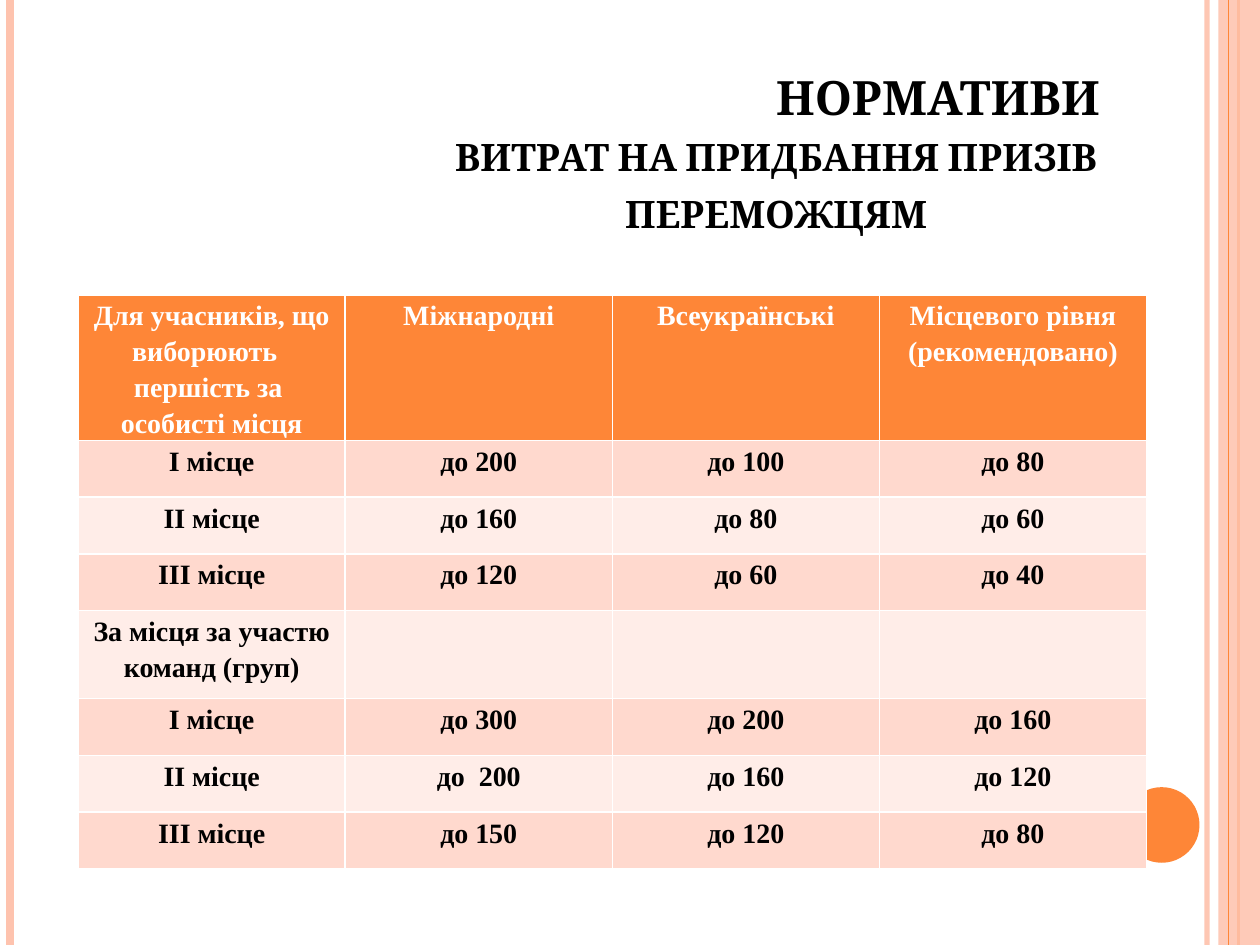
"""Build the slide with the spending norms for winners' prizes."""
from pptx import Presentation, util as u
from pptx.dml.color import RGBColor
from pptx.enum import shapes, text
from pptx.oxml.ns import qn
from lxml import etree

ORANGE, PEACH, BLACK, WHITE = "FE8637", "FEC3AE", "000000", "FFFFFF"
BANDS = "FFD9CE", "FFEDE8"
NORMS = [
    ["Для учасників, що виборюють  \nпершість за \nособисті місця", "Міжнародні",
     "Всеукраїнські", "Місцевого рівня (рекомендовано)"],
    ["I місце", "до 200", "до 100", "до 80"],
    ["II місце", "до 160", "до 80", "до 60"],
    ["III місце", "до 120", "до 60", "до 40"],
    ["За місця за участю команд (груп)", "", "", ""],
    ["I місце", "до 300", "до 200", "до 160"],
    ["II місце", "до  200", "до 160", "до 120"],
    ["III місце", "до 150", "до 120", "до 80"],
]
ROW_HEIGHTS = {0: 1.04, 4: 0.7}


def color(value):
    """Turn a hex string into a colour."""
    return RGBColor.from_string(value)


def paint(fill, value, opacity=100):
    """Fill solidly, with opacity in percent."""
    fill.solid()
    fill.fore_color.rgb = color(value)
    if opacity < 100:
        tone = fill._xPr.find(".//" + qn("a:srgbClr"))
        etree.SubElement(tone, qn("a:alpha"), val=str(opacity * 1000))


class Deck:
    """Hold the style and the current slide."""

    title_font, table_font = "Cambria", "Times New Roman"
    title_size, table_size = 27, 16

    def __init__(self, width, height):
        """Start a one-slide presentation."""
        self.file = Presentation()
        self.file.slide_width, self.file.slide_height = u.Inches(width), u.Inches(height)
        self.slide = self.file.slides.add_slide(self.file.slide_layouts[5])

    def box(self, left, top, width, height):
        """Turn shares of the slide into lengths."""
        wide, high = self.file.slide_width, self.file.slide_height
        return [int(share * side) for share, side in
                zip((left, top, width, height), (wide, high, wide, high))]

    def stripe(self, place, value, weight, opacity=100):
        """Draw a line over the full slide height."""
        x, top, _, bottom = self.box(place, 0, 0, 1)
        line = self.slide.shapes.add_connector(shapes.MSO_CONNECTOR.STRAIGHT, x, top, x, bottom)
        line.line.width = u.Pt(weight)
        paint(line.line.fill, value, opacity)
        etree.SubElement(line._element.spPr, qn("a:effectLst"))

    def shape(self, kind, area, value, opacity=100):
        """Draw a filled shape without outline."""
        figure = self.slide.shapes.add_shape(kind, *self.box(*area))
        figure.shadow.inherit = False
        figure.line.fill.background()
        paint(figure.fill, value, opacity)

    def style(self, paragraph, font, size, value):
        """Centre a paragraph and format its runs."""
        paragraph.alignment = text.PP_ALIGN.CENTER
        for run in paragraph.runs:
            run.font.name, run.font.size, run.font.bold = font, u.Pt(size), True
            run.font.color.rgb = color(value)

    def title(self, area, lines, shift, lift):
        """Set the small-caps title with its first line shifted right."""
        holder = self.slide.shapes.title
        holder.left, holder.top, holder.width, holder.height = self.box(*area)
        frame = holder.text_frame
        frame.text = "\n".join(lines)
        frame.auto_size = text.MSO_AUTO_SIZE.NONE
        frame.vertical_anchor = text.MSO_ANCHOR.BOTTOM
        frame.margin_bottom = self.box(0, lift, 0, 0)[1]
        for paragraph in frame.paragraphs:
            self.style(paragraph, self.title_font, self.title_size, BLACK)
            for run in paragraph.runs:
                run.font._element.set("cap", "small")
        indent = self.box(shift, 0, 0, 0)[0]
        frame.paragraphs[0]._p.get_or_add_pPr().set("marL", str(indent))

    def table(self, area, rows, heights, usual_height):
        """Add a banded table with equal columns."""
        grid = self.slide.shapes.add_table(len(rows), len(rows[0]), *self.box(*area)).table
        for r, row in enumerate(rows):
            grid.rows[r].height = u.Inches(heights.get(r, usual_height))
            for c, entry in enumerate(row):
                cell = grid.cell(r, c)
                paint(cell.fill, BANDS[(r - 1) % 2] if r else ORANGE)
                if not entry:
                    continue
                cell.margin_left = cell.margin_right = u.Inches(0.01)
                cell.margin_top = cell.margin_bottom = u.Inches(0.01)
                cell.text_frame.text = entry
                for paragraph in cell.text_frame.paragraphs:
                    paragraph.line_spacing = 1.15
                    self.style(paragraph, self.table_font, self.table_size,
                               BLACK if r else WHITE)


def main():
    """Compose and save the slide."""
    deck = Deck(10, 7.5)
    deck.stripe(0.958, PEACH, 3, 93)
    deck.stripe(0.008, PEACH, 4.5)
    deck.stripe(0.983, ORANGE, 1.5)
    deck.shape(shapes.MSO_SHAPE.RECTANGLE, (0.967, 0, 0.033, 1), PEACH, 87)
    deck.stripe(0.975, ORANGE, 0.75)
    deck.shape(shapes.MSO_SHAPE.OVAL, (0.892, 0.833, 0.06, 0.08), ORANGE)
    deck.title((0.07, 0.052, 0.834, 0.26),
               ["НОРМАТИВИ", "витрат на придбання призів переможцям"], 0.258, 0.06)
    deck.table((0.062, 0.312, 0.848, 0.615), NORMS, ROW_HEIGHTS, 0.45)
    deck.file.save("out.pptx")


if __name__ == "__main__":
    main()
